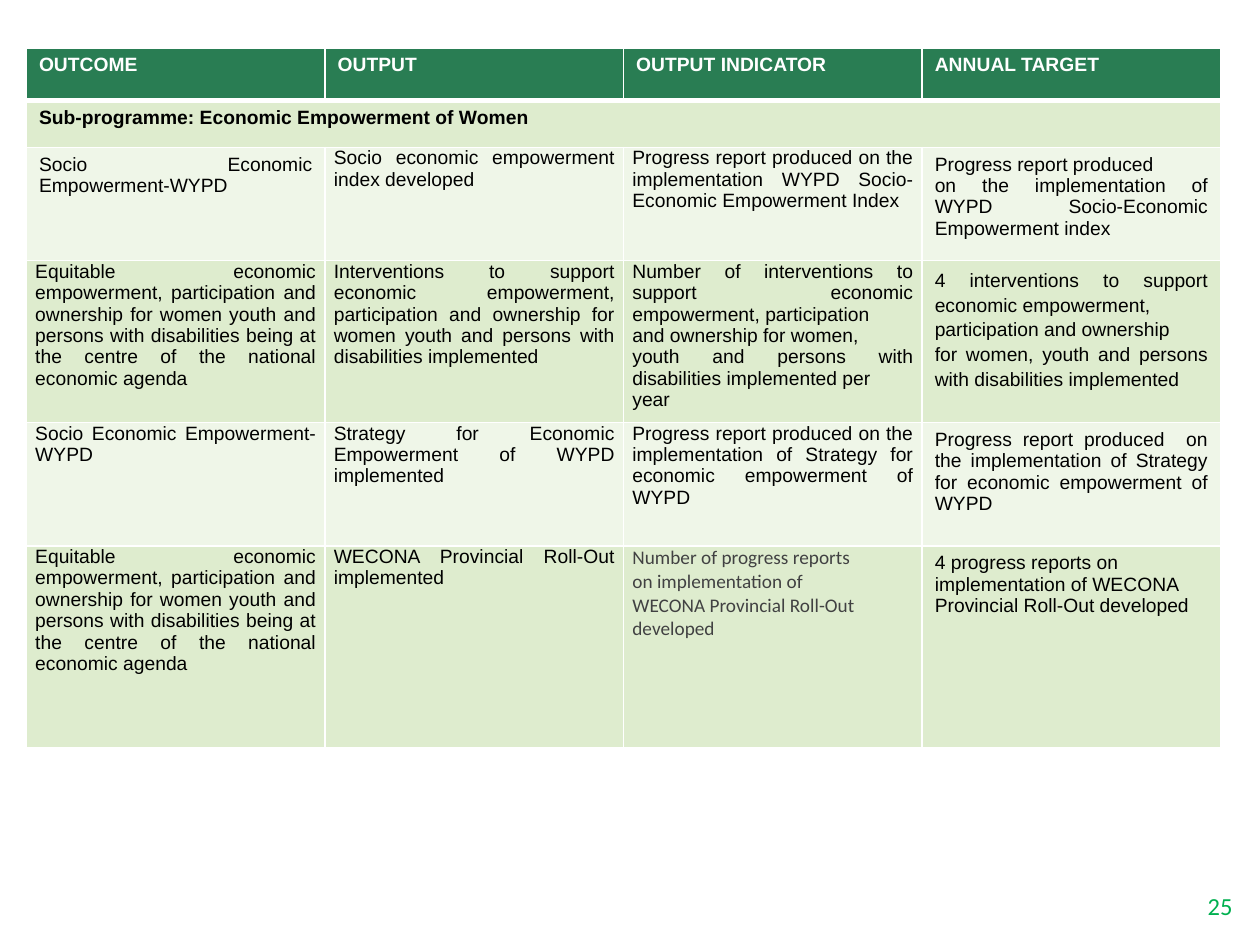
"""Build a slide with the output indicators and annual targets of a sub-programme."""
from dataclasses import dataclass

from lxml.etree import SubElement
from pptx import Presentation
from pptx.dml.color import RGBColor
from pptx.enum.text import PP_ALIGN
from pptx.oxml import parse_xml
from pptx.oxml.ns import nsdecls
from pptx.table import Table, _Cell
from pptx.text.text import TextFrame
from pptx.util import Inches, Pt

WHITE = RGBColor(0xFF, 0xFF, 0xFF)
BLACK = RGBColor(0, 0, 0)
GREY = RGBColor(0x41, 0x41, 0x42)
HEADER_GREEN = RGBColor(0x29, 0x7D, 0x53)
BAND_DARK = RGBColor(0xDE, 0xEC, 0xCE)
BAND_LIGHT = RGBColor(0xEF, 0xF6, 0xE8)
NUMBER_GREEN = RGBColor(0x00, 0xB0, 0x50)

COLUMN_WIDTH = 2.37
HEADER_HEIGHT = 0.42
SUBHEAD_HEIGHT = 0.37
HEADERS = ("OUTCOME", "OUTPUT", "OUTPUT INDICATOR", "ANNUAL TARGET")
SOCIO_ECONOMIC = "Socio Economic Empowerment-WYPD"
EQUITABLE = (
    "Equitable economic empowerment, participation and ownership for women youth and "
    "persons with disabilities being at the centre of the national economic agenda"
)


@dataclass(frozen=True)
class Entry:
    """Text of one body cell, one paragraph per line."""

    text: str
    padded: bool = False
    font: str = "Arial"
    color: RGBColor = BLACK
    align: PP_ALIGN = PP_ALIGN.JUSTIFY
    spacing: float | None = None


@dataclass(frozen=True)
class Row:
    """A body row with its height in inches."""

    height: float
    fill: RGBColor
    entries: tuple[Entry, ...]


ROWS = (
    Row(0.9, BAND_LIGHT, (
        Entry(SOCIO_ECONOMIC, padded=True),
        Entry("Socio economic empowerment index developed"),
        Entry("Progress report produced on the implementation WYPD "
              "Socio-Economic Empowerment Index"),
        Entry("Progress report produced\non the implementation of WYPD "
              "Socio-Economic Empowerment index", padded=True),
    )),
    Row(1.28, BAND_DARK, (
        Entry(EQUITABLE),
        Entry("Interventions to support economic empowerment, participation and "
              "ownership for women youth and persons with disabilities implemented"),
        Entry("Number of interventions to support economic empowerment, participation\n"
              "and ownership for women,\n"
              "youth and persons with disabilities implemented per\nyear"),
        Entry("4 interventions to support economic empowerment,\n"
              "participation and ownership\n"
              "for women, youth and persons with disabilities implemented",
              padded=True, spacing=1.15),
    )),
    Row(0.98, BAND_LIGHT, (
        Entry(SOCIO_ECONOMIC),
        Entry("Strategy for Economic Empowerment of WYPD implemented"),
        Entry("Progress report produced on the implementation of Strategy for "
              "economic empowerment of WYPD"),
        Entry("Progress report produced  on the implementation of Strategy for "
              "economic empowerment of WYPD", padded=True),
    )),
    Row(1.6, BAND_DARK, (
        Entry(EQUITABLE),
        Entry("WECONA Provincial Roll-Out implemented"),
        Entry("Number of progress reports\non implementation of\n"
              "WECONA Provincial Roll-Out\ndeveloped",
              font="Calibri", color=GREY, align=PP_ALIGN.LEFT),
        Entry("4 progress reports on\nimplementation of WECONA\n"
              "Provincial Roll-Out developed", padded=True),
    )),
)


def write_text(tf: TextFrame, text: str, *, size: float = 11, font: str = "Arial",
               color: RGBColor = BLACK, bold: bool = False,
               align: PP_ALIGN = PP_ALIGN.JUSTIFY, spacing: float | None = None) -> None:
    """Write each line of text as a formatted paragraph."""
    tf.word_wrap = True
    for i, line in enumerate(text.split("\n")):
        p = tf.add_paragraph() if i else tf.paragraphs[0]
        p.alignment = align
        p.line_spacing = spacing
        r = p.add_run()
        r.text = line
        r.font.size = Pt(size)
        r.font.name = font
        r.font.bold = bold
        r.font.color.rgb = color


def style_cell(cell: _Cell, fill: RGBColor, *, padded: bool = True,
               top: float = 1, bottom: float = 1) -> None:
    """Set the fill, insets and white borders of a cell."""
    cell.fill.solid()
    cell.fill.fore_color.rgb = fill
    side, edge = (0.1, 0.05) if padded else (0.07, 0)
    cell.margin_left = cell.margin_right = Inches(side)
    cell.margin_top = cell.margin_bottom = Inches(edge)
    tc_pr = cell._tc.get_or_add_tcPr()
    for i, (name, width) in enumerate((("lnL", 1), ("lnR", 1), ("lnT", top), ("lnB", bottom))):
        ln = parse_xml(f'<a:{name} {nsdecls("a")} w="{Pt(width)}"><a:solidFill/></a:{name}>')
        SubElement(ln[0], ln[0].tag.replace("solidFill", "srgbClr"), val=str(WHITE))
        tc_pr.insert(i, ln)


def fill_table(table: Table) -> None:
    """Fill the header, the sub-programme row and the body rows."""
    for column in table.columns:
        column.width = Inches(COLUMN_WIDTH)
    heights = (HEADER_HEIGHT, SUBHEAD_HEIGHT, *(row.height for row in ROWS))
    for table_row, height in zip(table.rows, heights):
        table_row.height = Inches(height)

    for c, title in enumerate(HEADERS):
        style_cell(table.cell(0, c), HEADER_GREEN, bottom=3)
        write_text(table.cell(0, c).text_frame, title, color=WHITE, bold=True)
        style_cell(table.cell(1, c), BAND_DARK, top=3)
    table.cell(1, 0).merge(table.cell(1, len(HEADERS) - 1))
    write_text(table.cell(1, 0).text_frame,
               "Sub-programme: Economic Empowerment of Women", bold=True)

    for n, row in enumerate(ROWS, start=2):
        for c, entry in enumerate(row.entries):
            cell = table.cell(n, c)
            style_cell(cell, row.fill, padded=entry.padded)
            write_text(cell.text_frame, entry.text, font=entry.font, color=entry.color,
                       align=entry.align, spacing=entry.spacing)


def main() -> None:
    """Create and save the presentation."""
    prs = Presentation()
    prs.slide_width, prs.slide_height = Inches(10), Inches(7.5)
    s = prs.slides.add_slide(prs.slide_layouts[6])
    number = s.shapes.add_textbox(Inches(9.24), Inches(7.02), Inches(0.64), Inches(0.34))
    write_text(number.text_frame, "25", size=14, font="Calibri", color=NUMBER_GREEN,
               align=PP_ALIGN.RIGHT)
    frame = s.shapes.add_table(len(ROWS) + 2, len(HEADERS), Inches(0.21), Inches(0.38),
                               Inches(COLUMN_WIDTH * len(HEADERS)), Inches(5.55))
    fill_table(frame.table)
    prs.save("out.pptx")


if __name__ == "__main__":
    main()
